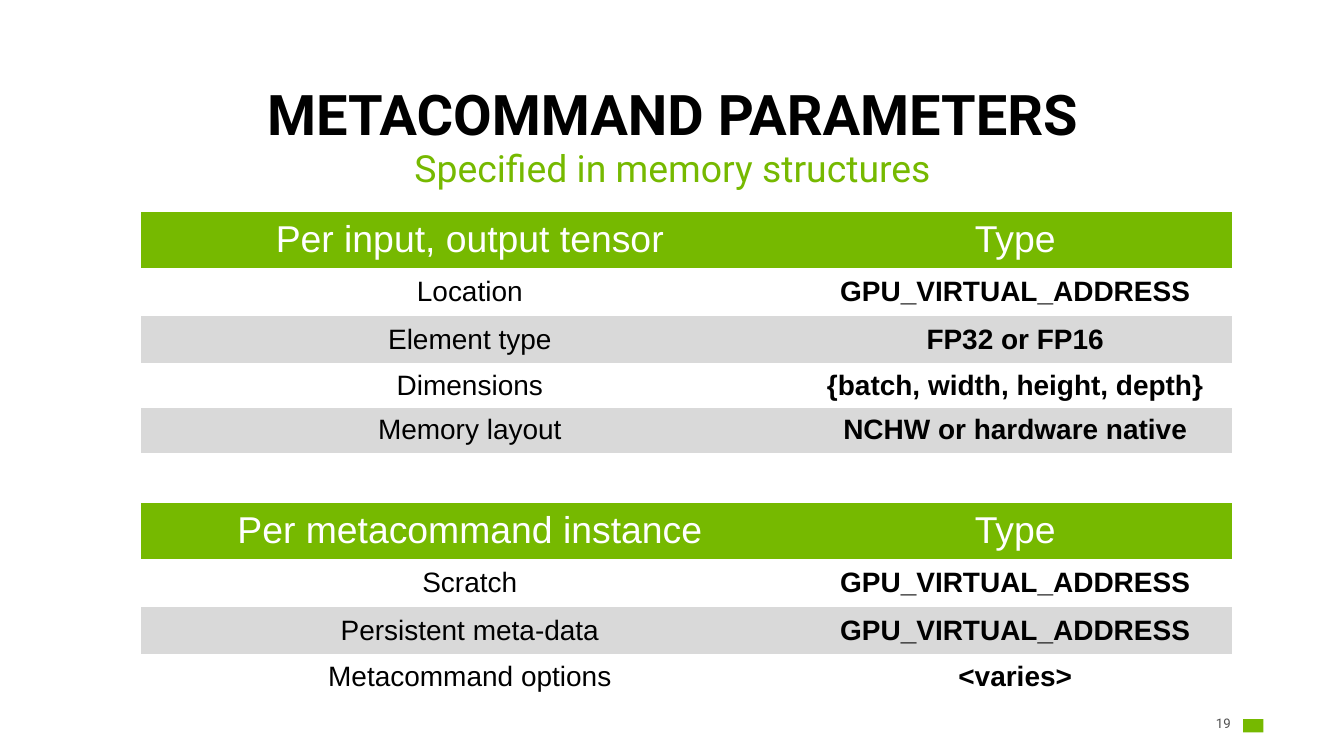
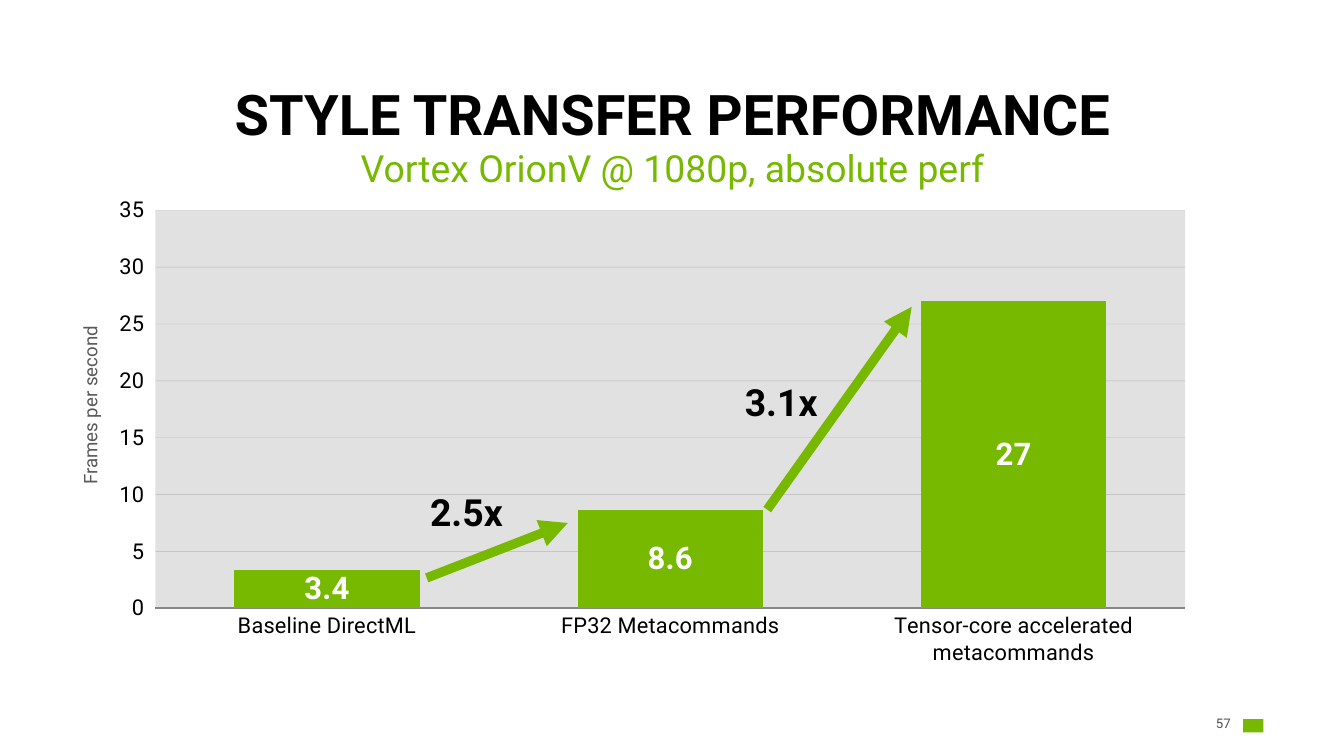
"""Build two slides: metacommand parameter tables and a performance chart."""
from dataclasses import dataclass

from pptx import Presentation
from pptx.chart.data import CategoryChartData
from pptx.dml.color import RGBColor
from pptx.enum.chart import XL_CHART_TYPE, XL_LABEL_POSITION, XL_TICK_MARK
from pptx.enum.shapes import MSO_CONNECTOR, MSO_SHAPE
from pptx.enum.text import MSO_ANCHOR, MSO_AUTO_SIZE, PP_ALIGN
from pptx.oxml import parse_xml
from pptx.oxml.ns import nsdecls, qn
from pptx.util import Inches, Pt

CENTER, RIGHT = PP_ALIGN.CENTER, PP_ALIGN.RIGHT
TOP, MIDDLE, BOTTOM = MSO_ANCHOR.TOP, MSO_ANCHOR.MIDDLE, MSO_ANCHOR.BOTTOM
FIT_SHAPE = MSO_AUTO_SIZE.SHAPE_TO_FIT_TEXT
STRAIGHT = MSO_CONNECTOR.STRAIGHT
RECTANGLE = MSO_SHAPE.RECTANGLE
COLUMNS = XL_CHART_TYPE.COLUMN_CLUSTERED
LABEL_CENTER = XL_LABEL_POSITION.CENTER
TICK_NONE, TICK_OUT = XL_TICK_MARK.NONE, XL_TICK_MARK.OUTSIDE


@dataclass(frozen=True)
class Theme:
    green: str = "76B900"
    black: str = "000000"
    white: str = "FFFFFF"
    band: str = "D9D9D9"
    plot: str = "E1E1E1"
    axis: str = "868686"
    grid: str = "3F3F3F"
    axis_title: str = "5A5A5A"
    number: str = "505050"
    font: str = "Roboto"
    table_font: str = "Arial"
    title_size: float = 36
    heading_size: float = 24
    label_size: float = 20
    cell_size: float = 18
    axis_size: float = 14
    axis_title_size: float = 12
    number_size: float = 8.5


THEME = Theme()
NO_TABLE_STYLE = "{2D5ABB26-0587-4C30-8999-92F81FD0307C}"

PARAMETERS = {
    "title": "METACOMMAND PARAMETERS",
    "subtitle": "Specified in memory structures",
    "number": "19",
}
PERFORMANCE = {
    "title": "STYLE TRANSFER PERFORMANCE",
    "subtitle": "Vortex OrionV @ 1080p, absolute perf",
    "number": "57",
}

TABLE_LEFT = 1.26
COLUMN_WIDTHS = (5.87, 3.87)
ROW_HEIGHTS = (0.48, 0.43, 0.42, 0.39, 0.39)
TABLES = [
    (1.89, [
        ("Per input, output tensor", "Type"),
        ("Location", "GPU_VIRTUAL_ADDRESS"),
        ("Element type", "FP32 or FP16"),
        ("Dimensions", "{batch, width, height, depth}"),
        ("Memory layout", "NCHW or hardware native"),
    ]),
    (4.49, [
        ("Per metacommand instance", "Type"),
        ("Scratch", "GPU_VIRTUAL_ADDRESS"),
        ("Persistent meta-data", "GPU_VIRTUAL_ADDRESS"),
        ("Metacommand options", "<varies>"),
    ]),
]

FRAME_RATES = {
    "Baseline DirectML": 3.4,
    "FP32 Metacommands": 8.6,
    "Tensor-core accelerated metacommands": 27,
}
CHART_BOX = (0.95, 1.56, 10.68, 4.74)
PLOT_LAYOUT = {"x": 0.041, "y": 0.067, "w": 0.861, "h": 0.75}
AXIS_TITLE = "Frames per second"
SPEEDUPS = [
    ("2.5x", (3.71, 4.36), (3.81, 5.16), (5.07, 4.67)),
    ("3.1x", (6.52, 3.38), (6.85, 4.55), (8.14, 2.74)),
]


def rgb(value):
    return RGBColor.from_string(value)


def inches(values):
    return [Inches(value) for value in values]


def paint(shape, color):
    shape.fill.solid()
    shape.fill.fore_color.rgb = rgb(color)


def set_font(font, size, color, bold=False, name=THEME.font):
    font.name = name
    font.size = Pt(size)
    font.bold = bold
    font.color.rgb = rgb(color)


def write(paragraph, text, size, color, bold=False, name=THEME.font, align=CENTER):
    paragraph.alignment = align
    run = paragraph.add_run()
    run.text = text
    set_font(run.font, size, color, bold, name)


def add_text(shapes, box, text, size, color, bold=False, anchor=TOP, align=CENTER):
    shape = shapes.add_textbox(*inches(box))
    frame = shape.text_frame
    frame.word_wrap = True
    frame.vertical_anchor = anchor
    paragraph = frame.paragraphs[0]
    paragraph.line_spacing = 0.9
    write(paragraph, text, size, color, bold, align=align)
    return shape


def add_slide(presentation, content):
    slide = presentation.slides.add_slide(presentation.slide_layouts[6])
    shapes = slide.shapes
    number = add_text(shapes, (10.68, 6.38, 0.31, 0.18), content["number"],
                      THEME.number_size, THEME.number, anchor=MIDDLE, align=RIGHT)
    frame = number.text_frame
    frame.margin_left = frame.margin_right = frame.margin_top = frame.margin_bottom = 0
    badge = shapes.add_shape(RECTANGLE, *inches((11.1, 6.42, 0.18, 0.12)))
    badge.shadow.inherit = False
    paint(badge, THEME.green)
    badge.line.fill.background()
    add_text(shapes, (0.55, 0.72, 10.91, 0.65), content["title"],
             THEME.title_size, THEME.black, True, BOTTOM)
    add_text(shapes, (0.55, 1.29, 10.91, 0.57), content["subtitle"],
             THEME.heading_size, THEME.green)
    return slide


def add_parameter_table(slide, top, rows):
    heights = ROW_HEIGHTS[:len(rows)]
    box = (TABLE_LEFT, top, sum(COLUMN_WIDTHS), sum(heights))
    table = slide.shapes.add_table(len(rows), len(COLUMN_WIDTHS), *inches(box)).table
    table.first_row = table.horz_banding = False
    table._tbl.tblPr.find(qn("a:tableStyleId")).text = NO_TABLE_STYLE
    for column, width in zip(table.columns, COLUMN_WIDTHS):
        column.width = Inches(width)
    for row_index, (texts, height) in enumerate(zip(rows, heights)):
        table.rows[row_index].height = Inches(height)
        header = row_index == 0
        band = THEME.white if row_index % 2 else THEME.band
        size = THEME.heading_size if header else THEME.cell_size
        color = THEME.white if header else THEME.black
        for column_index, text in enumerate(texts):
            cell = table.cell(row_index, column_index)
            cell.vertical_anchor = MIDDLE
            paint(cell, THEME.green if header else band)
            bold = not header and column_index == 1
            write(cell.text_frame.paragraphs[0], text, size, color, bold, THEME.table_font)


def style_plot_area(chart):
    plot_area = chart._chartSpace.chart.plotArea
    for layout in plot_area.findall(qn("c:layout")):
        plot_area.remove(layout)
    modes = "".join(f'<c:{axis}Mode val="edge"/>' for axis in "xy")
    sizes = "".join(f'<c:{key} val="{value}"/>' for key, value in PLOT_LAYOUT.items())
    plot_area.insert(0, parse_xml(
        f'<c:layout {nsdecls("c")}><c:manualLayout><c:layoutTarget val="inner"/>'
        f"{modes}{sizes}</c:manualLayout></c:layout>"))
    plot_area.append(parse_xml(
        f'<c:spPr {nsdecls("c", "a")}><a:solidFill><a:srgbClr val="{THEME.plot}"/>'
        "</a:solidFill></c:spPr>"))


def style_axes(chart):
    category_axis, value_axis = chart.category_axis, chart.value_axis
    for axis in (category_axis, value_axis):
        set_font(axis.tick_labels.font, THEME.axis_size, THEME.black)
        axis.minor_tick_mark = TICK_NONE
    category_axis.major_tick_mark = TICK_NONE
    category_axis.format.line.color.rgb = rgb(THEME.axis)
    category_axis.format.line.width = Pt(1.5)
    value_axis.major_tick_mark = TICK_OUT
    value_axis.format.line.fill.background()
    value_axis.minimum_scale, value_axis.maximum_scale = 0, 35
    value_axis.major_unit = 5
    gridlines = value_axis.major_gridlines
    gridlines.format.line.color.rgb = rgb(THEME.grid)
    gridlines.format.line.width = Pt(0.25)
    grid_color = next(value_axis._element.find(qn("c:majorGridlines")).iter(qn("a:srgbClr")))
    grid_color.append(parse_xml(f'<a:alpha {nsdecls("a")} val="25000"/>'))


def add_frame_rate_chart(slide):
    data = CategoryChartData()
    data.categories = list(FRAME_RATES)
    data.add_series("Series 1", list(FRAME_RATES.values()))
    chart = slide.shapes.add_chart(COLUMNS, *inches(CHART_BOX), data).chart
    chart.has_legend = chart.has_title = False
    set_font(chart.font, 10, THEME.white)
    plot = chart.plots[0]
    plot.gap_width = 85
    plot.vary_by_categories = False
    series = plot.series[0]
    paint(series.format, THEME.green)
    labels = series.data_labels
    labels.show_value = True
    labels.position = LABEL_CENTER
    set_font(labels.font, THEME.label_size, THEME.white, True)
    style_axes(chart)
    style_plot_area(chart)


def add_speedup(slide, text, corner, start, end):
    shapes = slide.shapes.add_group_shape().shapes
    arrow = shapes.add_connector(STRAIGHT, *inches(start + end))
    arrow.line.color.rgb = rgb(THEME.green)
    arrow.line.width = Pt(6)
    arrow.line._get_or_add_ln().append(parse_xml(f'<a:tailEnd {nsdecls("a")} type="triangle"/>'))
    arrow._element.spPr.append(parse_xml(f'<a:effectLst {nsdecls("a")}/>'))
    label = add_text(shapes, corner + (0.91, 0.46), text,
                     THEME.heading_size, THEME.black, True, MIDDLE)
    label.text_frame.word_wrap = False
    label.text_frame.auto_size = FIT_SHAPE


def main():
    presentation = Presentation()
    presentation.slide_width, presentation.slide_height = Inches(12), Inches(6.75)

    slide = add_slide(presentation, PARAMETERS)
    for top, rows in TABLES:
        add_parameter_table(slide, top, rows)

    slide = add_slide(presentation, PERFORMANCE)
    add_frame_rate_chart(slide)
    axis_title = add_text(slide.shapes, (-1.26, 3.47, 4.13, 0.3), AXIS_TITLE,
                          THEME.axis_title_size, THEME.axis_title, anchor=BOTTOM)
    axis_title.rotation = 270
    for speedup in SPEEDUPS:
        add_speedup(slide, *speedup)

    presentation.save("out.pptx")


if __name__ == "__main__":
    main()
